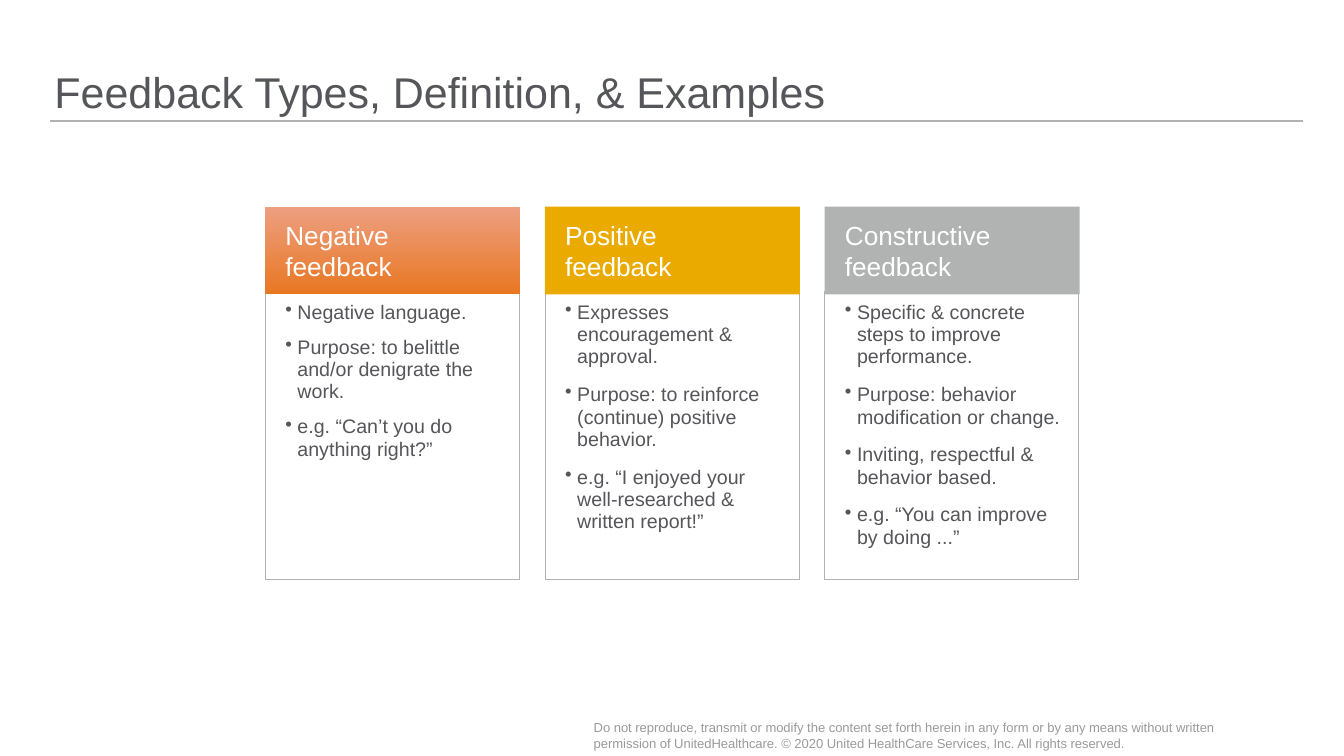
import pptx
import pptx.util
import pptx.dml.color
import pptx.enum.shapes
import pptx.enum.text
import pptx.oxml.ns
import lxml.etree

Inches = pptx.util.Inches
Pt = pptx.util.Pt
RGBColor = pptx.dml.color.RGBColor
Anchor = pptx.enum.text.MSO_ANCHOR
qn = pptx.oxml.ns.qn

INK = RGBColor(0x55, 0x56, 0x5A)
GRAY = RGBColor(0xB1, 0xB3, 0xB3)
PALE = RGBColor(0x99, 0x9A, 0x9B)
PEACH = RGBColor(0xED, 0x9F, 0x81)
ORANGE = RGBColor(0xE8, 0x77, 0x22)
GOLD = RGBColor(0xEA, 0xAA, 0x00)
WHITE = RGBColor(0xFF, 0xFF, 0xFF)

# Heading, header colours, space after each bullet, bullets
COLUMNS = [
    ("Negative\nfeedback", [PEACH, ORANGE], 3, [
        "Negative language.",
        "Purpose: to belittle and/or denigrate the work.",
        "e.g. “Can’t you do anything right?”"]),
    ("Positive\nfeedback", [GOLD], 5, [
        "Expresses encouragement & approval.",
        "Purpose: to reinforce (continue) positive behavior.",
        "e.g. “I enjoyed your well-researched & written report!”"]),
    ("Constructive \vfeedback", [GRAY], 5, [
        "Specific & concrete steps to improve performance.",
        "Purpose: behavior modification or change.",
        "Inviting, respectful & behavior based.",
        "e.g. “You can improve by doing ...”"]),
]


class Deck:
    font = "Arial"

    def __init__(self, slide):
        self.slide = slide

    def style(self, frame, text, size, color, inset, anchor=Anchor.TOP):
        frame.text = text
        frame.word_wrap = True
        frame.vertical_anchor = anchor
        left, top, right, bottom = [Inches(gap) for gap in inset]
        frame.margin_left, frame.margin_top = left, top
        frame.margin_right, frame.margin_bottom = right, bottom
        for para in frame.paragraphs:
            para.alignment = pptx.enum.text.PP_ALIGN.LEFT
            for run in para.runs:
                run.font.name = self.font
                run.font.size = Pt(size)
                run.font.color.rgb = color

    def label(self, box, text, size, color, inset, anchor=Anchor.TOP):
        shape = self.slide.shapes.add_textbox(*[Inches(n) for n in box])
        self.style(shape.text_frame, text, size, color, inset, anchor)
        return shape

    def rect(self, box):
        kind = pptx.enum.shapes.MSO_SHAPE.RECTANGLE
        shape = self.slide.shapes.add_shape(kind, *[Inches(n) for n in box])
        shape.shadow.inherit = False
        return shape

    def header(self, box, text, colors):
        shape = self.rect(box)
        shape.line.fill.background()
        if len(colors) > 1:
            shape.fill.gradient()
            shape.fill.gradient_angle = 270
            for stop, color in zip(shape.fill.gradient_stops, colors):
                stop.color.rgb = color
        else:
            shape.fill.solid()
            shape.fill.fore_color.rgb = colors[0]
        self.style(shape.text_frame, text, 18.7, WHITE,
                   (0.2, 0.05, 0.1, 0.05), Anchor.MIDDLE)

    def panel(self, box, items, after):
        shape = self.rect(box)
        shape.fill.background()
        shape.line.color.rgb = GRAY
        shape.line.width = Pt(0.5)
        self.style(shape.text_frame, "\n".join(items), 14, INK,
                   (0.2, 0.1, 0.1, 0.1))
        for index, para in enumerate(shape.text_frame.paragraphs):
            para.line_spacing = 0.95
            para.space_before = Pt(6 if index else 0)
            para.space_after = Pt(after)
            props = para._p.get_or_add_pPr()
            props.set("marL", str(Inches(0.12)))
            props.set("indent", str(-Inches(0.12)))
            lxml.etree.SubElement(props, qn("a:buChar")).set("char", "•")

    def rule(self, left, right, top):
        line = self.slide.shapes.add_connector(
            pptx.enum.shapes.MSO_CONNECTOR.STRAIGHT,
            Inches(left), Inches(top), Inches(right), Inches(top))
        line.line.color.rgb = GRAY
        line.line.width = Pt(1)
        lxml.etree.SubElement(line._element.spPr, qn("a:effectLst"))


def main():
    show = pptx.Presentation()
    show.slide_width = Inches(13.33)
    show.slide_height = Inches(7.5)
    deck = Deck(show.slides.add_slide(show.slide_layouts[6]))

    # Title and rule
    deck.rule(0.5, 12.92, 1.2)
    title = deck.label((0.54, 0, 12.38, 1.17),
                       "Feedback Types, Definition, & Examples",
                       30.7, INK, (0, 0, 0, 0), Anchor.BOTTOM)
    title.text_frame.paragraphs[0].line_spacing = 0.9

    # Three feedback columns
    pitch = (8.18 - 2.63) / 2
    for index, (head, colors, after, items) in enumerate(COLUMNS):
        left = 2.63 + index * pitch
        deck.panel((left, 2.89, 2.52, 2.86), items, after)
        deck.header((left, 2.05, 2.53, 0.87), head, colors)

    # Copyright line
    deck.label((5.79, 7.09, 6.48, 0.4),
               "Do not reproduce, transmit or modify the content set forth "
               "herein in any form or by any means without written "
               "permission of UnitedHealthcare. © 2020 United HealthCare "
               "Services, Inc. All rights reserved.",
               9.3, PALE, (0.1, 0.05, 0.1, 0.05))

    show.save("out.pptx")


if __name__ == "__main__":
    main()
